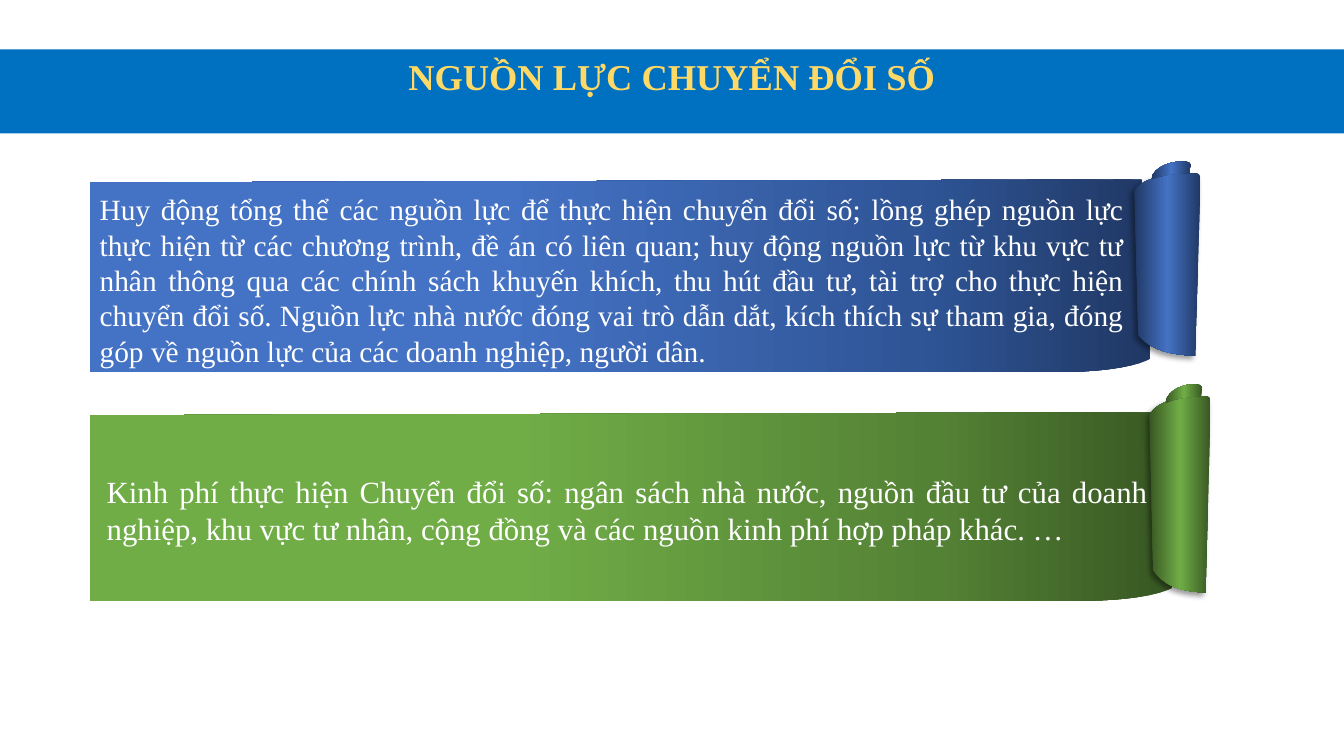
from copy import deepcopy
from dataclasses import dataclass

from lxml.etree import SubElement
from pptx import Presentation
from pptx.dml.color import RGBColor
from pptx.dml.fill import FillFormat
from pptx.enum.text import MSO_ANCHOR, MSO_AUTO_SIZE, PP_ALIGN
from pptx.oxml import parse_xml
from pptx.oxml.ns import nsdecls, qn
from pptx.shapes.base import BaseShape
from pptx.slide import Slide
from pptx.text.text import TextFrame
from pptx.util import Pt

PX = 9144  # EMU in one px, 100 px to the inch

Box = tuple[int, int, int, int]
Stops = list[tuple[int, str]]
Outline = list[tuple[int, ...]]


@dataclass(frozen=True)
class Theme:
    font: str = "Times New Roman"
    title_size: int = 26
    title_bar: str = "0070C0"
    title_line: str = "FFC000"
    title_stops: tuple = ((0, "FFC000"), (4, "FFD966"), (87, "FFF2CC"))
    body: str = "FFFFFF"
    shadow: str = "000000"
    blue: tuple = ("203864", "2F5597", "4472C4")
    green: tuple = ("385723", "548235", "70AD47")


@dataclass(frozen=True)
class Scroll:
    tones: tuple
    banner: Box
    roll: Box
    cap: Box
    text_box: Box
    size: int
    text: str


THEME = Theme()

# Thousandths of the enclosing box: pairs are corners, sextuples cubic curves.
BANNER: Outline = [(0, 16), (0, 1000), (914, 1000),
                   (962, 1000, 990, 963, 1000, 931),
                   (1000, 623, 992, 314, 992, 0)]
ROLL: Outline = [(914, 1000), (670, 994, 290, 989, 63, 885), (0, 96),
                 (158, 6, 670, 0, 921, 0), (1030, 3, 970, 33, 995, 56)]
CAP: Outline = [(0, 1000), (27, 735), (225, 60, 675, 0, 820, 0),
                (900, 0, 970, 100, 990, 170), (950, 650),
                (700, 650, 325, 700, 0, 1000)]

SCROLLS = [
    Scroll(THEME.blue, (89, 178, 1052, 191), (1125, 172, 66, 181),
           (1142, 160, 40, 18), (89, 184, 1036, 187), 21,
           "Huy động tổng thể các nguồn lực để thực hiện chuyển đổi số; "
           "lồng ghép nguồn lực thực hiện từ các chương trình, đề án có liên "
           "quan; huy động nguồn lực từ khu vực tư nhân thông qua các chính "
           "sách khuyến khích, thu hút đầu tư, tài trợ cho thực hiện chuyển "
           "đổi số. Nguồn lực nhà nước đóng vai trò dẫn dắt, kích thích sự "
           "tham gia, đóng góp về nguồn lực của các doanh nghiệp, người dân."),
    Scroll(THEME.green, (89, 409, 1074, 187), (1140, 393, 61, 195),
           (1156, 381, 37, 19), (96, 464, 1052, 84), 22,
           "Kinh phí thực hiện Chuyển đổi số: ngân sách nhà nước, nguồn đầu "
           "tư của doanh nghiệp, khu vực tư nhân, cộng đồng và các nguồn kinh "
           "phí hợp pháp khác. …"),
]


def rgb(color: str) -> RGBColor:
    return RGBColor.from_string(color)


def apply(target: object, values: dict) -> None:
    for name, value in values.items():
        setattr(target, name, value)


def place(s: BaseShape, box: Box) -> None:
    apply(s, dict(zip(("left", "top", "width", "height"),
                      (v * PX for v in box))))


def set_gradient(fill: FillFormat, owner, stops: Stops, angle: int) -> None:
    """Give fill, whose XML lies inside owner, the listed percent stops."""
    fill.gradient()
    fill.gradient_angle = angle
    stop_list = owner.find(f"{qn('a:gradFill')}/{qn('a:gsLst')}")
    for _ in stops[2:]:
        stop_list.append(deepcopy(stop_list[0]))
    for stop, (percent, color) in zip(fill.gradient_stops, stops):
        stop.position = percent / 100
        stop.color.rgb = rgb(color)


def to_emu(step: tuple[int, ...], box: Box) -> list[tuple[int, int]]:
    left, top, width, height = box
    return [(round((left + x * width / 1000) * PX),
             round((top + y * height / 1000) * PX))
            for x, y in zip(step[::2], step[1::2])]


def add_outline(shapes, outline: Outline, box: Box,
                stops: Stops) -> BaseShape:
    """Draw the corners as a freeform, then bend its curved segments."""
    steps = [to_emu(step, box) for step in outline]
    builder = shapes.build_freeform(*steps[0][-1])
    builder.add_line_segments([step[-1] for step in steps[1:]], close=True)
    s = builder.convert_to_shape()
    segments = list(s.element.iter(qn("a:lnTo")))
    for segment, step in zip(segments, steps[1:]):
        if len(step) == 3:
            curve = segment.makeelement(qn("a:cubicBezTo"))
            for x, y in step:
                SubElement(curve, qn("a:pt"), x=str(x - s.left),
                           y=str(y - s.top))
            segment.getparent().replace(segment, curve)
    s.shadow.inherit = False
    s.line.fill.background()
    set_gradient(s.fill, s.element.spPr, stops, 180)
    return s


def add_shadow(s: BaseShape) -> None:
    effects = s.element.spPr.find(qn("a:effectLst"))
    effects.append(parse_xml(
        f'<a:outerShdw {nsdecls("a")} blurRad="{Pt(4)}" dist="{Pt(3)}" '
        'dir="8100000" algn="tr" rotWithShape="0">'
        f'<a:srgbClr val="{THEME.shadow}"><a:alpha val="40000"/></a:srgbClr>'
        '</a:outerShdw>'))


def add_scroll(slide: Slide, scroll: Scroll) -> None:
    dark, middle, light = scroll.tones
    rolled = [(0, dark), (50, light), (100, dark)]
    add_outline(slide.shapes, BANNER, scroll.banner,
                [(0, dark), (22, middle), (61, light)])
    group = slide.shapes.add_group_shape()
    add_shadow(add_outline(group.shapes, ROLL, scroll.roll, rolled))
    add_outline(group.shapes, CAP, scroll.cap, rolled)


def write(tf: TextFrame, text: str, size: int, anchor: MSO_ANCHOR,
          alignment: PP_ALIGN):
    """Fill tf with one paragraph and return its run."""
    apply(tf, {"word_wrap": True, "vertical_anchor": anchor,
               "auto_size": MSO_AUTO_SIZE.SHAPE_TO_FIT_TEXT})
    p = tf.paragraphs[0]
    p.alignment = alignment
    r = p.add_run()
    r.text = text
    apply(r.font, {"name": THEME.font, "size": Pt(size)})
    return r


def add_scroll_text(slide: Slide, scroll: Scroll) -> None:
    s = slide.shapes.add_textbox(0, 0, 0, 0)
    place(s, scroll.text_box)
    r = write(s.text_frame, scroll.text, scroll.size, MSO_ANCHOR.MIDDLE,
              PP_ALIGN.JUSTIFY)
    r.font.color.rgb = rgb(THEME.body)


def set_title(slide: Slide, text: str) -> None:
    s = slide.shapes.title
    place(s, (0, 49, 1333, 54))
    s.fill.solid()
    s.fill.fore_color.rgb = rgb(THEME.title_bar)
    r = write(s.text_frame, text, THEME.title_size, MSO_ANCHOR.TOP,
              PP_ALIGN.CENTER)
    r.font.bold = True
    r_pr = r._r.get_or_add_rPr()
    set_gradient(r.font.fill, r_pr, THEME.title_stops, 270)
    r_pr.insert(0, parse_xml(
        f'<a:ln {nsdecls("a")} w="{Pt(1)}"><a:solidFill>'
        f'<a:srgbClr val="{THEME.title_line}"/></a:solidFill></a:ln>'))


def main() -> None:
    prs = Presentation()
    apply(prs, {"slide_width": 1333 * PX, "slide_height": 750 * PX})
    slide = prs.slides.add_slide(prs.slide_layouts[5])
    set_title(slide, "NGUỒN LỰC CHUYỂN ĐỔI SỐ")
    for scroll in SCROLLS:
        add_scroll(slide, scroll)
    for scroll in SCROLLS:
        add_scroll_text(slide, scroll)
    prs.save("out.pptx")


if __name__ == "__main__":
    main()
